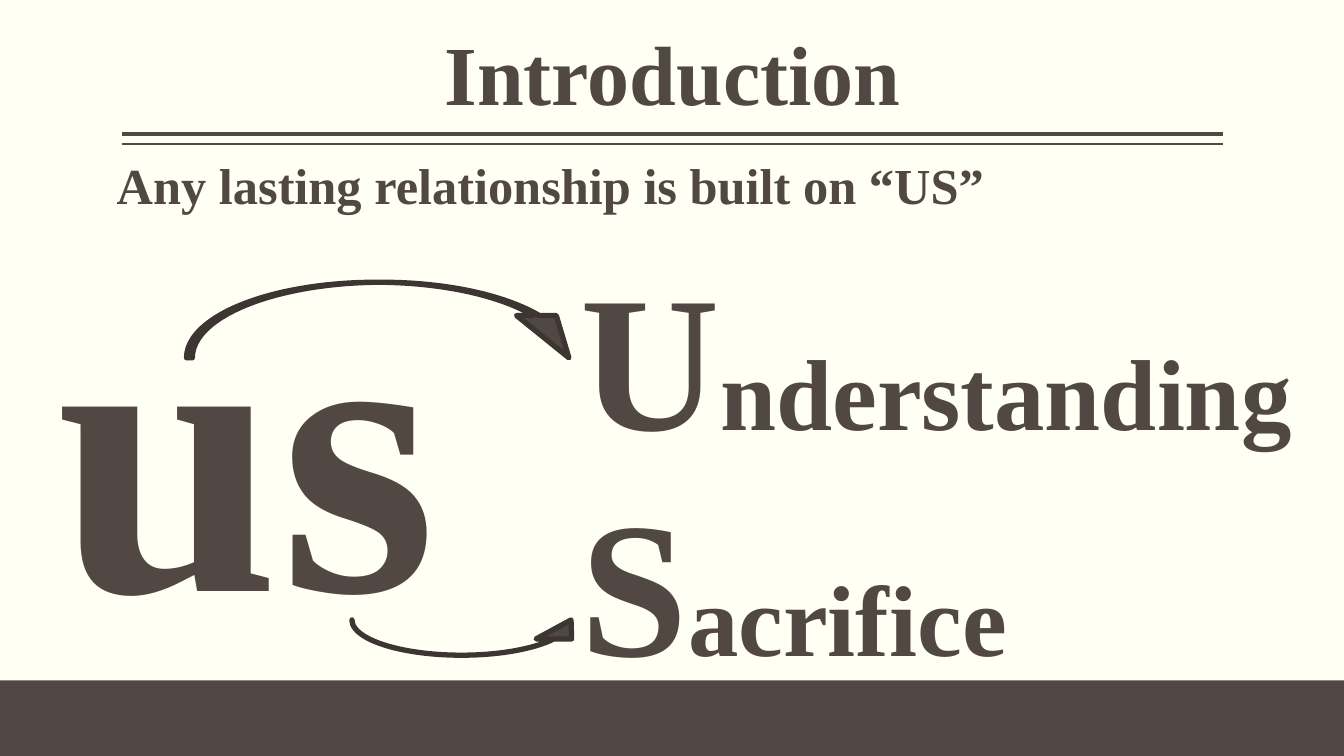
from pptx import Presentation
from pptx.dml.color import RGBColor
from pptx.enum.shapes import MSO_CONNECTOR, MSO_SHAPE
from pptx.enum.text import MSO_ANCHOR, PP_ALIGN
from pptx.oxml.ns import qn
from pptx.util import Inches, Pt
from lxml import etree

IVORY = RGBColor(0xFF, 0xFF, 0xF3)
BROWN = RGBColor(0x51, 0x48, 0x43)
DARK = RGBColor(0x3C, 0x35, 0x32)
FONT = "Times New Roman"


def add_text(s, box, lines, align=PP_ALIGN.LEFT, anchor=MSO_ANCHOR.TOP,
             before=0, spacing=0.9, wrap=True):
    """Place bold paragraphs, each a list of (text, size) runs, in a box."""
    tf = s.shapes.add_textbox(*map(Inches, box)).text_frame
    tf.word_wrap = wrap
    tf.vertical_anchor = anchor
    tf.margin_left = tf.margin_right = 0
    for i, runs in enumerate(lines):
        p = tf.paragraphs[0] if i == 0 else tf.add_paragraph()
        p.alignment = align
        p.line_spacing = spacing
        p.space_before = Pt(before)
        p.font.name, p.font.bold = FONT, True
        p.font.color.rgb = BROWN
        for text, size in runs:
            r = p.add_run()
            r.text = text
            r.font.size = Pt(size)


def add_solid(s, kind, box, adjustments=(), line_width=None):
    """Place a brown shape, outlined only when a line width is given."""
    sp = s.shapes.add_shape(kind, *map(Inches, box))
    sp.shadow.inherit = False
    sp.fill.solid()
    sp.fill.fore_color.rgb = BROWN
    for i, value in enumerate(adjustments):
        sp.adjustments[i] = value
    if line_width:
        sp.line.color.rgb = DARK
        sp.line.width = Pt(line_width)
    else:
        sp.line.fill.background()


def add_header(s, x, y, w, h):
    """Place the title, its double rule and the statement below."""
    add_text(s, (x, y, w, h), [[("Introduction", 60)]],
             PP_ALIGN.CENTER, MSO_ANCHOR.BOTTOM)
    for gap, width in ((0.05, 3), (0.15, 1)):
        rule_y = Inches(y + h + gap)
        rule = s.shapes.add_connector(MSO_CONNECTOR.STRAIGHT, Inches(x), rule_y,
                                      Inches(x + w), rule_y)
        rule.line.color.rgb = BROWN
        rule.line.width = Pt(width)
        etree.SubElement(rule._element.spPr, qn("a:effectLst"))
    add_text(s, (x - 0.21, y + h + 0.2, 8.92, 0.71),
             [[("Any lasting relationship is built on “US”", 36)]],
             PP_ALIGN.CENTER, spacing=1, wrap=False)


def add_acronym(s, x, y, w, h):
    """Place the large word, its expansion and the two curved arrows."""
    add_text(s, (x, y, 6.01, h), [[("us", 287)]], PP_ALIGN.CENTER, before=12)
    left = x + 6.32
    add_text(s, (left, y + 0.19, w - 6.32, 4.05),
             [[("U", 138), ("nderstanding", 72)], [("S", 138), ("acrifice", 72)]],
             before=12)
    tip = left + 0.08
    add_solid(s, MSO_SHAPE.CURVED_UP_ARROW, (tip - 2.35, y + 3.77, 2.35, 0.35),
              (0, 1.007, 0.538), 3.78)
    add_solid(s, MSO_SHAPE.CURVED_DOWN_ARROW, (tip - 3.99, y + 0.42, 3.99, 0.75),
              (0.076, 0.526, 0.56), 3.78)


def main():
    """Build and save the slide."""
    prs = Presentation()
    prs.slide_width, prs.slide_height = Inches(13.33), Inches(7.5)
    s = prs.slides.add_slide(prs.slide_layouts[6])
    s.background.fill.solid()
    s.background.fill.fore_color.rgb = IVORY
    add_header(s, 1.21, 0.08, 10.92, 1.2)
    add_solid(s, MSO_SHAPE.RECTANGLE, (0, 6.75, 13.33, 0.75))
    add_acronym(s, -0.56, 2.38, 13.59, 5)
    prs.save("out.pptx")


if __name__ == "__main__":
    main()
